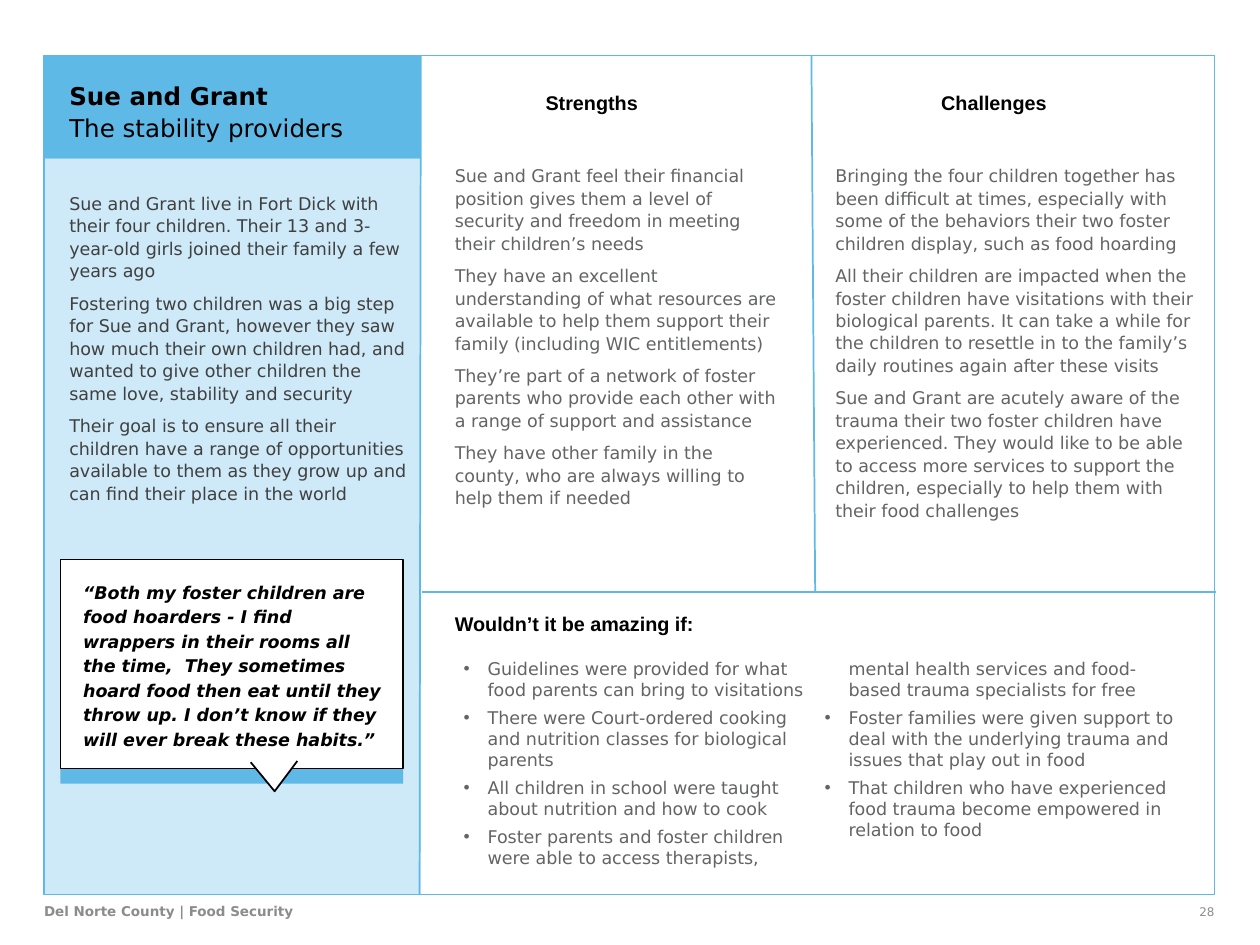
"""Build the Sue and Grant persona slide."""
from lxml.etree import SubElement
from pptx import Presentation
from pptx.dml.color import RGBColor
from pptx.enum.shapes import MSO_CONNECTOR, MSO_SHAPE
from pptx.enum.text import MSO_ANCHOR, MSO_AUTO_SIZE, PP_ALIGN
from pptx.oxml.ns import qn
from pptx.util import Inches, Pt

BLUE = RGBColor(0x5E, 0xB9, 0xE7)
BLACK = RGBColor(0, 0, 0)
WHITE = RGBColor(0xFF, 0xFF, 0xFF)
DARK = RGBColor(0x40, 0x40, 0x40)
GRAY = RGBColor(0x63, 0x64, 0x66)
PALE = RGBColor(0x8C, 0x8C, 0x8C)

LEFT, TOP, WIDTH, HEIGHT = 0.35, 0.44, 9.29, 6.66
BOTTOM = TOP + HEIGHT
PANEL_WIDTH, HEADER_HEIGHT = 2.99, 0.82
SPLIT = 4.7
TEXT_LEFT = 3.58
INSETS = (0.03, 0.03, 0.03, 0.03)

STORY = [
    "Sue and Grant live in Fort Dick with their four children. Their 13 and 3-year-old girls joined their family a few years ago",
    "Fostering two children was a big step for Sue and Grant, however they saw how much their own children had, and wanted to give other children the same love, stability and security",
    "Their goal is to ensure all their children have a range of opportunities available to them as they grow up and can find their place in the world",
]
STRENGTHS = [
    "Sue and Grant feel their financial position gives them a level of security and freedom in meeting their children’s needs",
    "They have an excellent understanding of what resources are available to help them support their family (including WIC entitlements)",
    "They’re part of a network of foster parents who provide each other with a range of support and assistance",
    "They have other family in the county, who are always willing to help them if needed",
]
CHALLENGES = [
    "Bringing the four children together has been difficult at times, especially with some of the behaviors their two foster children display, such as food hoarding",
    "All their children are impacted when the foster children have visitations with their biological parents. It can take a while for the children to resettle in to the family’s daily routines again after these visits",
    "Sue and Grant are acutely aware of the trauma their two foster children have experienced. They would like to be able to access more services to support the children, especially to help them with their food challenges",
]
QUOTE = "“Both my foster children are food hoarders - I find wrappers in their rooms all the time,  They sometimes hoard food then eat until they throw up. I don’t know if they will ever break these habits.”"
WISHES = [
    "Guidelines were provided for what food parents can bring to visitations",
    "There were Court-ordered cooking and nutrition classes for biological parents",
    "All children in school were taught about nutrition and how to cook",
    "Foster parents and foster children were able to access therapists, mental health services and food-based trauma specialists for free",
    "Foster families were given support to deal with the underlying trauma and issues that play out in food",
    "That children who have experienced food trauma become empowered in relation to food",
]


class PersonaSlide:
    """Hold the style and the current slide."""

    body_font = "DejaVu Sans"
    heading_font = "Arial"
    line_width = Pt(1)

    def __init__(self, slide):
        """Keep the slide and its shapes."""
        self.slide = slide
        self.shapes = slide.shapes

    def paint(self, shape, fill, line):
        """Set fill and outline, and drop the shadow."""
        shape.shadow.inherit = False
        if fill is None:
            shape.fill.background()
        else:
            shape.fill.solid()
            shape.fill.fore_color.rgb = fill
        if line is None:
            shape.line.fill.background()
        else:
            shape.line.color.rgb = line
            shape.line.width = self.line_width

    def box(self, left, top, width, height, fill=None, line=None, opacity=None):
        """Add a rectangle."""
        rectangle = self.shapes.add_shape(
            MSO_SHAPE.RECTANGLE, Inches(left), Inches(top), Inches(width), Inches(height))
        self.paint(rectangle, fill, line)
        if opacity is not None:
            color = rectangle.element.spPr.find(qn("a:solidFill"))[0]
            SubElement(color, qn("a:alpha"), val=str(opacity * 1000))

    def rule(self, x1, y1, x2, y2):
        """Add a dividing line."""
        divider = self.shapes.add_connector(
            MSO_CONNECTOR.STRAIGHT, Inches(x1), Inches(y1), Inches(x2), Inches(y2))
        divider.line.color.rgb = BLUE
        divider.line.width = self.line_width
        SubElement(divider.element.spPr, qn("a:effectLst"))

    def pointer(self, start, *points):
        """Add the open tail of the speech bubble."""
        builder = self.shapes.build_freeform(Inches(start[0]), Inches(start[1]))
        builder.add_line_segments([(Inches(x), Inches(y)) for x, y in points], close=False)
        self.paint(builder.convert_to_shape(), WHITE, BLACK)

    def text(self, left, top, width, height, paragraphs, color, size=10, font=None,
             bold=False, italic=False, spacing=1.07, before=0, insets=INSETS, wrap=True,
             align=PP_ALIGN.LEFT, bullet=False, holder=None):
        """Write paragraphs into a text box or a placeholder."""
        area = (Inches(left), Inches(top), Inches(width), Inches(height))
        if holder is None:
            holder = self.shapes.add_textbox(*area)
        else:
            holder.left, holder.top, holder.width, holder.height = area
            holder.element.getparent().append(holder.element)
        frame = holder.text_frame
        frame.text = "\n".join(paragraphs)
        frame.word_wrap = wrap
        frame.auto_size = MSO_AUTO_SIZE.NONE
        frame.vertical_anchor = MSO_ANCHOR.TOP
        frame.margin_left, frame.margin_top, frame.margin_right, frame.margin_bottom = map(Inches, insets)
        for index, paragraph in enumerate(frame.paragraphs):
            if bullet:
                properties = paragraph._p.get_or_add_pPr()
                properties.set("marL", str(Inches(0.19)))
                properties.set("indent", str(-Inches(0.19)))
                SubElement(properties, qn("a:buChar"), char="•")
            paragraph.alignment = align
            paragraph.line_spacing = spacing
            paragraph.space_before = Pt(before if index else 0)
            for line_break in paragraph._p.findall(qn("a:br")):
                SubElement(line_break, qn("a:rPr"), sz=str(size * 100))
            for run in paragraph.runs:
                run.font.name = font or self.body_font
                run.font.size = Pt(size)
                run.font.bold = bold
                run.font.italic = italic
                run.font.color.rgb = color
        return holder

    def title(self, name, role):
        """Write the bold name and the plain role in the title placeholder."""
        heading = self.text(0.52, 0.6, 2.61, 0.79, [f"{name}\v{role}"], BLACK, size=14,
                            holder=self.shapes.title)
        heading.text_frame.paragraphs[0].runs[0].font.bold = True

    def heading(self, left, top, width, label):
        """Add a section heading."""
        self.text(left, top, width, 0.24, [label], BLACK, size=11.3,
                  font=self.heading_font, bold=True)

    def bullets(self, left, top, width, height, items):
        """Write a two-column list in the body placeholder."""
        wishes = self.text(left, top, width, height, items, GRAY, spacing=1.0, before=4,
                           insets=(0.1, 0.05, 0.1, 0.05), bullet=True,
                           holder=self.slide.placeholders[1])
        wishes.text_frame._txBody.bodyPr.set("numCol", "2")


def main():
    """Build and save the slide."""
    deck = Presentation()
    deck.slide_width, deck.slide_height = Inches(10), Inches(7.5)
    persona = PersonaSlide(deck.slides.add_slide(deck.slide_layouts[1]))

    header_bottom = TOP + HEADER_HEIGHT
    persona.box(LEFT, header_bottom, PANEL_WIDTH, HEIGHT - HEADER_HEIGHT, fill=BLUE, opacity=30)
    persona.box(LEFT, TOP, PANEL_WIDTH, HEADER_HEIGHT, fill=BLUE)
    persona.title("Sue and Grant ", "The stability providers")
    persona.text(0.52, 1.49, 2.75, 2.74, STORY, DARK, before=5.7)

    persona.rule(6.44, TOP, 6.47, SPLIT)
    persona.rule(9.65, SPLIT, 3.35, SPLIT)
    persona.text(TEXT_LEFT, 1.27, 2.64, 2.81, STRENGTHS, GRAY, before=5.7)
    persona.text(6.6, 1.27, 2.9, 3.17, CHALLENGES, GRAY, before=5.7)
    persona.box(LEFT, TOP, WIDTH, HEIGHT, line=BLUE)

    persona.box(0.48, 4.53, 2.72, 1.69, fill=BLUE)
    persona.box(0.48, 4.44, 2.72, 1.66, fill=WHITE, line=BLACK)
    persona.text(0.63, 4.56, 2.47, 1.62, [QUOTE], BLACK, bold=True, italic=True, spacing=Pt(14))
    persona.pointer((1.99, 6.05), (2.18, 6.28), (2.36, 6.04))

    persona.heading(TEXT_LEFT, 4.81, 2.05, "Wouldn’t it be amazing if:")
    persona.rule(3.34, TOP, 3.33, BOTTOM)
    persona.bullets(TEXT_LEFT, 5.17, 5.93, 1.82, WISHES)
    persona.heading(4.3, 0.68, 0.88, "Strengths")
    persona.heading(7.44, 0.68, 0.98, "Challenges")

    persona.text(LEFT, BOTTOM, 4.28, 0.28, ["Del Norte County | Food Security"], PALE, size=7.7,
                 bold=True, spacing=1.0, insets=(0, 0.07, 0, 0))
    persona.text(7.53, BOTTOM, 2.11, 0.23, ["28"], PALE, size=6.8, spacing=1.0,
                 insets=(0, 0.08, 0, 0), align=PP_ALIGN.RIGHT)
    deck.save("out.pptx")


if __name__ == "__main__":
    main()
